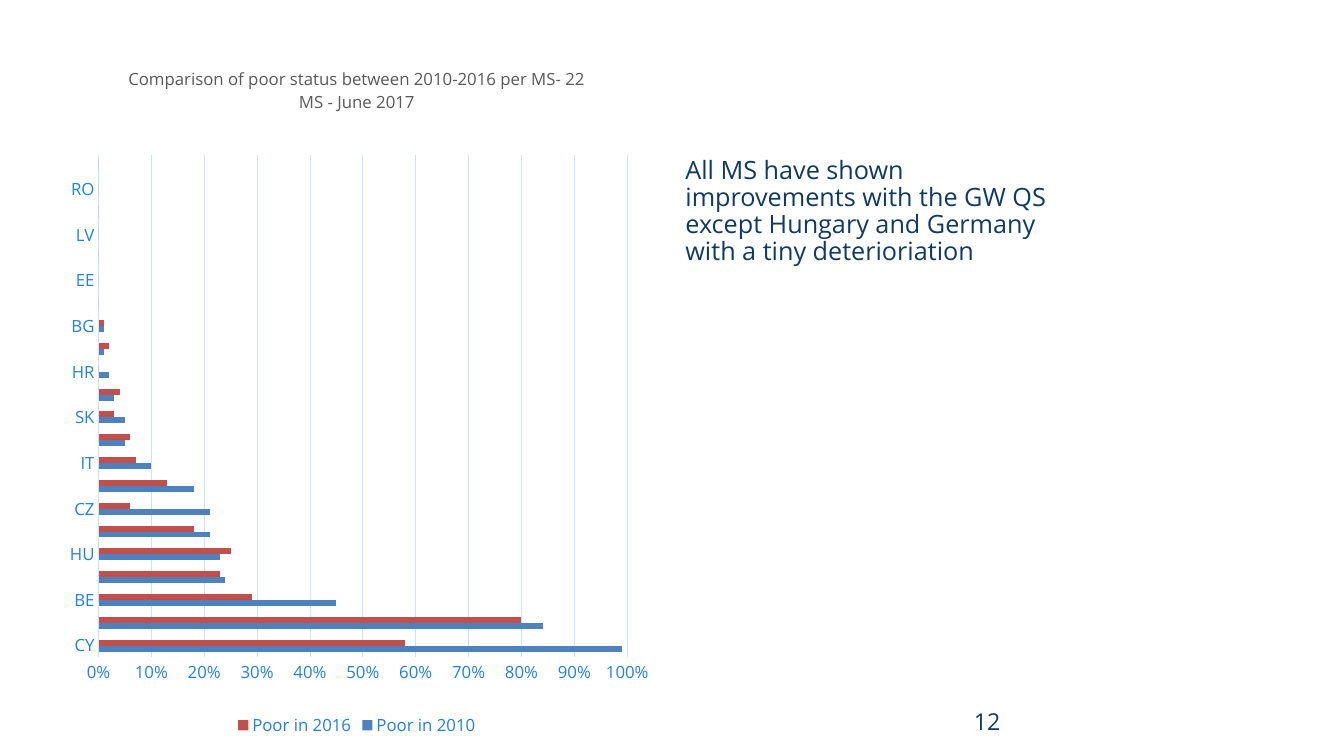
"""Build the slide comparing poor groundwater status per Member State."""
import pptx
import pptx.chart.data
import pptx.dml.color
import pptx.enum.chart
import pptx.enum.text
import pptx.oxml
import pptx.util
from pptx.util import Inches

FONT = "Open Sans"
COLORS = {"text": "113A60", "axis": "2681D6", "grid": "CCE2F6", "title": "595959"}
TITLE = "Comparison of poor status between 2010-2016 per MS- 22 MS - June 2017"
MESSAGE = ("All MS have shown improvements with the GW QS except Hungary "
           "and Germany with a tiny deterioriation")
PAGE_NUMBER = "12"
STATUS = [
    ("CY", 0.99, 0.58), ("MT", 0.84, 0.80), ("BE", 0.45, 0.29), ("UK", 0.24, 0.23),
    ("HU", 0.23, 0.25), ("ES", 0.21, 0.18), ("CZ", 0.21, 0.06), ("FR", 0.18, 0.13),
    ("IT", 0.10, 0.07), ("SE", 0.05, 0.06), ("SK", 0.05, 0.03), ("DE", 0.03, 0.04),
    ("HR", 0.02, 0), ("PT", 0.01, 0.02), ("BG", 0.01, 0.01), ("FI", 0, 0),
    ("EE", 0, 0), ("LU", 0, 0), ("LV", 0, 0), ("NL", 0, 0), ("RO", 0, 0), ("SI", 0, 0),
]
SERIES = [("Poor in 2010", "4F81BD"), ("Poor in 2016", "C0504D")]
PLOT_AREA = {"x": 0.07, "y": 0.16, "w": 0.88, "h": 0.72}


def rgb(value):
    return pptx.dml.color.RGBColor.from_string(value)


def style_font(font, size, color):
    font.name = FONT
    font.size = pptx.util.Pt(size)
    font.bold = False
    font.color.rgb = rgb(color)


def style_line(line):
    line.color.rgb = rgb(COLORS["grid"])
    line.width = pptx.util.Pt(0.75)


def add_text(slide, box, text, size, anchor, spacing):
    frame = slide.shapes.add_textbox(*map(Inches, box)).text_frame
    frame.word_wrap = True
    frame.vertical_anchor = anchor
    paragraph = frame.paragraphs[0]
    paragraph.line_spacing = spacing
    run = paragraph.add_run()
    run.text = text
    style_font(run.font, size, COLORS["text"])


def place_plot_area(chart):
    plot_area = chart._chartSpace.chart.plotArea
    for old_layout in plot_area.xpath("c:layout"):
        plot_area.remove(old_layout)
    namespace = "http://schemas.openxmlformats.org/drawingml/2006/chart"
    modes = '<c:layoutTarget val="inner"/><c:xMode val="edge"/><c:yMode val="edge"/>'
    sizes = "".join(f'<c:{key} val="{value}"/>' for key, value in PLOT_AREA.items())
    plot_area.insert(0, pptx.oxml.parse_xml(
        f'<c:layout xmlns:c="{namespace}"><c:manualLayout>{modes}{sizes}'
        "</c:manualLayout></c:layout>"))


def add_status_chart(slide, box):
    data = pptx.chart.data.CategoryChartData(number_format="0%")
    data.categories = [row[0] for row in STATUS]
    for column, (name, _) in enumerate(SERIES, start=1):
        data.add_series(name, [row[column] for row in STATUS])
    chart = slide.shapes.add_chart(
        pptx.enum.chart.XL_CHART_TYPE.BAR_CLUSTERED, *map(Inches, box), data).chart
    style_font(chart.font, 10, COLORS["text"])

    chart.has_title = True
    run = chart.chart_title.text_frame.paragraphs[0].add_run()
    run.text = TITLE
    style_font(run.font, 12, COLORS["title"])
    chart.chart_title.include_in_layout = False

    chart.has_legend = True
    chart.legend.position = pptx.enum.chart.XL_LEGEND_POSITION.BOTTOM
    chart.legend.include_in_layout = False
    style_font(chart.legend.font, 12, COLORS["axis"])

    plot = chart.plots[0]
    plot.gap_width = 182
    plot.overlap = 0
    plot.vary_by_categories = False
    for series, (_, color) in zip(plot.series, SERIES):
        series.format.fill.solid()
        series.format.fill.fore_color.rgb = rgb(color)

    for axis in (chart.category_axis, chart.value_axis):
        axis.major_tick_mark = pptx.enum.chart.XL_TICK_MARK.NONE
        axis.minor_tick_mark = pptx.enum.chart.XL_TICK_MARK.NONE
        style_font(axis.tick_labels.font, 12, COLORS["axis"])
    style_line(chart.category_axis.format.line)

    values = chart.value_axis
    values.minimum_scale = 0
    values.maximum_scale = 1
    values.major_unit = 0.1
    values.tick_labels.number_format = "0%"
    values.tick_labels.number_format_is_linked = False
    values.format.line.fill.background()
    values.has_major_gridlines = True
    style_line(values.major_gridlines.format.line)
    place_plot_area(chart)


def main():
    presentation = pptx.Presentation()
    presentation.slide_width = Inches(13.33)
    presentation.slide_height = Inches(7.5)
    slide = presentation.slides.add_slide(presentation.slide_layouts[6])
    anchors = pptx.enum.text.MSO_ANCHOR
    add_text(slide, (9.56, 6.95, 3.11, 0.4), PAGE_NUMBER, 16.6, anchors.MIDDLE, 1.0)
    add_text(slide, (6.7, 1.52, 4.06, 1.31), MESSAGE, 18, anchors.TOP, 0.89)
    add_status_chart(slide, (0.56, 0.43, 5.96, 6.92))
    presentation.save("out.pptx")


if __name__ == "__main__":
    main()
